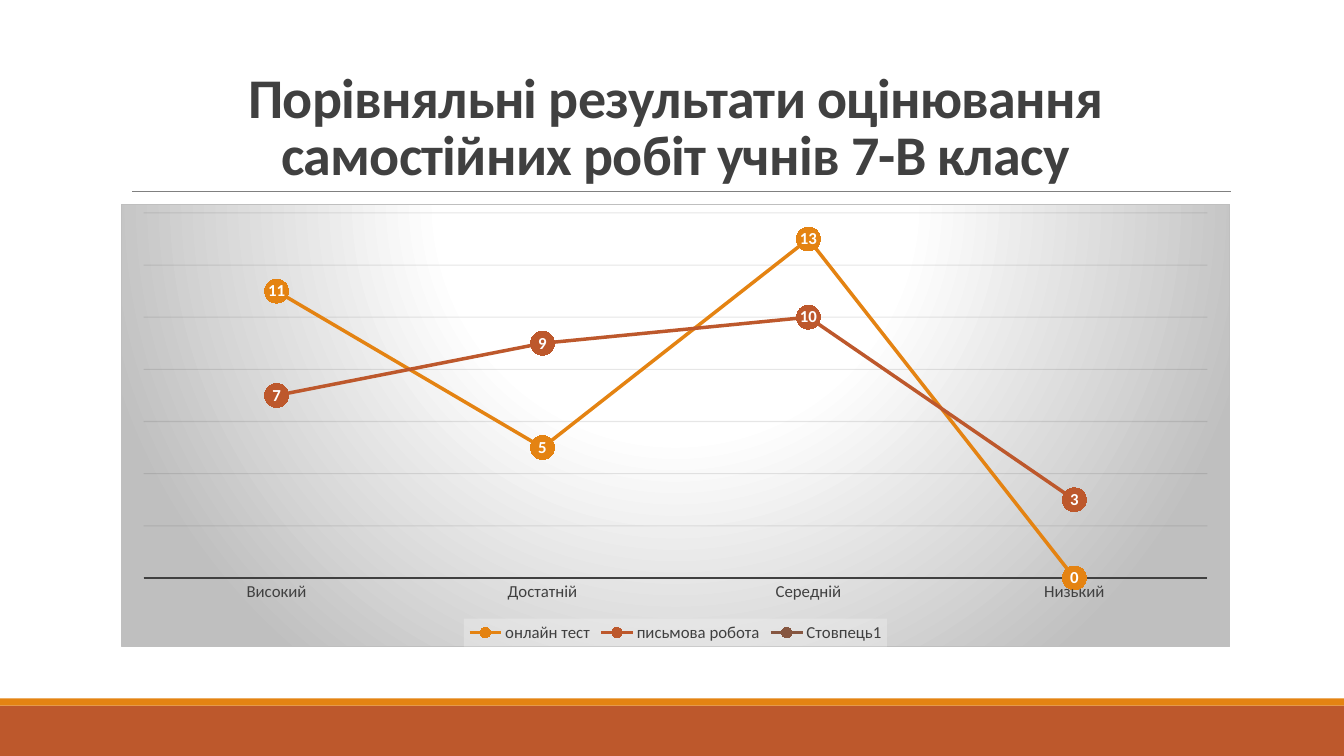
from lxml import etree
from pptx import Presentation
from pptx.chart.data import CategoryChartData
from pptx.dml.color import RGBColor
from pptx.enum.chart import (XL_CHART_TYPE as ChartType, XL_LABEL_POSITION as LabelPosition,
                             XL_LEGEND_POSITION as LegendPosition, XL_MARKER_STYLE as MarkerStyle,
                             XL_TICK_MARK as TickMark)
from pptx.enum.shapes import MSO_CONNECTOR as Connector, MSO_SHAPE as Shape
from pptx.enum.text import MSO_ANCHOR as Anchor, PP_ALIGN as Align
from pptx.oxml import parse_xml
from pptx.oxml.ns import nsdecls, qn
from pptx.util import Inches, Pt

TITLE = "Порівняльні результати оцінювання самостійних робіт учнів 7-В класу"
LEVELS = ["Високий", "Достатній", "Середній", "Низький"]
SERIES = [
    ("онлайн тест", [11, 5, 13, 0], "E48312"),
    ("письмова робота", [7, 9, 10, 3], "BD582C"),
    ("Стовпець1", [None] * 4, "865640"),
]
BANDS = [(7, 0.5, "BD582C"), (6.93, 0.07, "E48312")]
GRADIENT = [(0, "FFFFFF"), (39, "FFFFFF"), (100, "BFBFBF")]
PLOT_SHARES = {"x": 0.02, "y": 0.02, "w": 0.96, "h": 0.825}
WIDTH, HEIGHT = 13.33, 7.5
LEFT, CONTENT_WIDTH = 1.2, 11
FONT, DARK = "Calibri", "404040"


def color(value):
    return RGBColor.from_string(value)


def style_font(font, size, value, bold=False):
    font.name, font.size, font.bold = FONT, Pt(size), bold
    font.color.rgb = color(value)


def style_line(line, value, width):
    line.color.rgb = color(value)
    line.width = Pt(width)


def add_frame(page):
    for top, height, value in BANDS:
        band = page.shapes.add_shape(Shape.RECTANGLE, 0, Inches(top), Inches(WIDTH), Inches(height))
        band.shadow.inherit = False
        band.fill.solid()
        band.fill.fore_color.rgb = color(value)
        band.line.fill.background()
    rule = page.shapes.add_connector(Connector.STRAIGHT, Inches(1.31), Inches(1.9),
                                     Inches(12.21), Inches(1.9))
    style_line(rule.line, "808080", 0.5)
    etree.SubElement(rule._element.spPr, qn("a:effectLst"))


def add_title(page):
    box = page.shapes.add_textbox(Inches(LEFT), Inches(0.31), Inches(CONTENT_WIDTH), Inches(1.59))
    frame = box.text_frame
    frame.word_wrap = True
    frame.vertical_anchor = Anchor.BOTTOM
    frame.text = TITLE
    para = frame.paragraphs[0]
    para.alignment = Align.CENTER
    para.line_spacing = 0.85
    span = para.runs[0]
    style_font(span.font, 40, DARK, True)
    span.font._element.set("spc", "-50")


def add_line_chart(page):
    data = CategoryChartData()
    data.categories = LEVELS
    for name, values, _ in SERIES:
        data.add_series(name, values)
    chart = page.shapes.add_chart(ChartType.LINE_MARKERS, Inches(LEFT), Inches(2.02),
                                  Inches(CONTENT_WIDTH), Inches(4.4), data).chart
    style_font(chart.font, 10, "000000")
    chart.has_title = False
    for series, (_, _, value) in zip(chart.plots[0].series, SERIES):
        style_series(series, value)
    style_axes(chart)
    style_legend(chart)
    style_areas(chart)


def style_series(series, value):
    series.smooth = False
    style_line(series.format.line, value, 2.5)
    marker = series.marker
    marker.style, marker.size = MarkerStyle.CIRCLE, 17
    marker.format.fill.solid()
    marker.format.fill.fore_color.rgb = color(value)
    marker.format.line.fill.background()
    labels = series.data_labels
    labels.show_value = True
    labels.position = LabelPosition.CENTER
    style_font(labels.font, 12, "FFFFFF", True)


def style_axes(chart):
    levels, scores = chart.category_axis, chart.value_axis
    levels.major_tick_mark = levels.minor_tick_mark = TickMark.NONE
    style_font(levels.tick_labels.font, 12, DARK)
    style_line(levels.format.line, DARK, 2)
    scores.minimum_scale, scores.maximum_scale, scores.major_unit = 0, 14, 2
    scores.has_major_gridlines = True
    grid = scores.major_gridlines.format.line
    style_line(grid, "0D0D0D", 0.75)
    shade = scores._element.find(qn("c:majorGridlines")).find(".//" + qn("a:srgbClr"))
    etree.SubElement(shade, qn("a:alpha"), val="10000")
    scores.visible = False


def style_legend(chart):
    chart.has_legend = True
    legend = chart.legend
    legend.position = LegendPosition.BOTTOM
    legend.include_in_layout = False
    style_font(legend.font, 12, DARK)
    legend._element.find(qn("c:overlay")).addnext(parse_xml(
        f'<c:spPr {nsdecls("c", "a")}><a:solidFill><a:srgbClr val="F2F2F2">'
        '<a:alpha val="39000"/></a:srgbClr></a:solidFill></c:spPr>'))


def style_areas(chart):
    root = chart._chartSpace
    stops = "".join(f'<a:gs pos="{share * 1000}"><a:srgbClr val="{value}"/></a:gs>'
                    for share, value in GRADIENT)
    root.find(qn("c:chart")).addnext(parse_xml(
        f'<c:spPr {nsdecls("c", "a")}><a:gradFill><a:gsLst>{stops}</a:gsLst>'
        '<a:path path="circle"><a:fillToRect l="50000" t="-80000" r="50000" b="180000"/></a:path>'
        '</a:gradFill><a:ln w="9525"><a:solidFill><a:srgbClr val="BFBFBF"/></a:solidFill></a:ln>'
        '</c:spPr>'))
    plot_area = root.find(".//" + qn("c:plotArea"))
    for layout in plot_area.findall(qn("c:layout")):
        plot_area.remove(layout)
    modes = '<c:xMode val="edge"/><c:yMode val="edge"/>'
    shares = "".join(f'<c:{key} val="{share}"/>' for key, share in PLOT_SHARES.items())
    plot_area.insert(0, parse_xml(
        f'<c:layout {nsdecls("c")}><c:manualLayout><c:layoutTarget val="inner"/>'
        f'{modes}{shares}</c:manualLayout></c:layout>'))


def main():
    """Build the slide comparing the two kinds of assessment."""
    deck = Presentation()
    deck.slide_width, deck.slide_height = Inches(WIDTH), Inches(HEIGHT)
    page = deck.slides.add_slide(deck.slide_layouts[6])
    add_frame(page)
    add_title(page)
    add_line_chart(page)
    deck.save("out.pptx")


if __name__ == "__main__":
    main()
